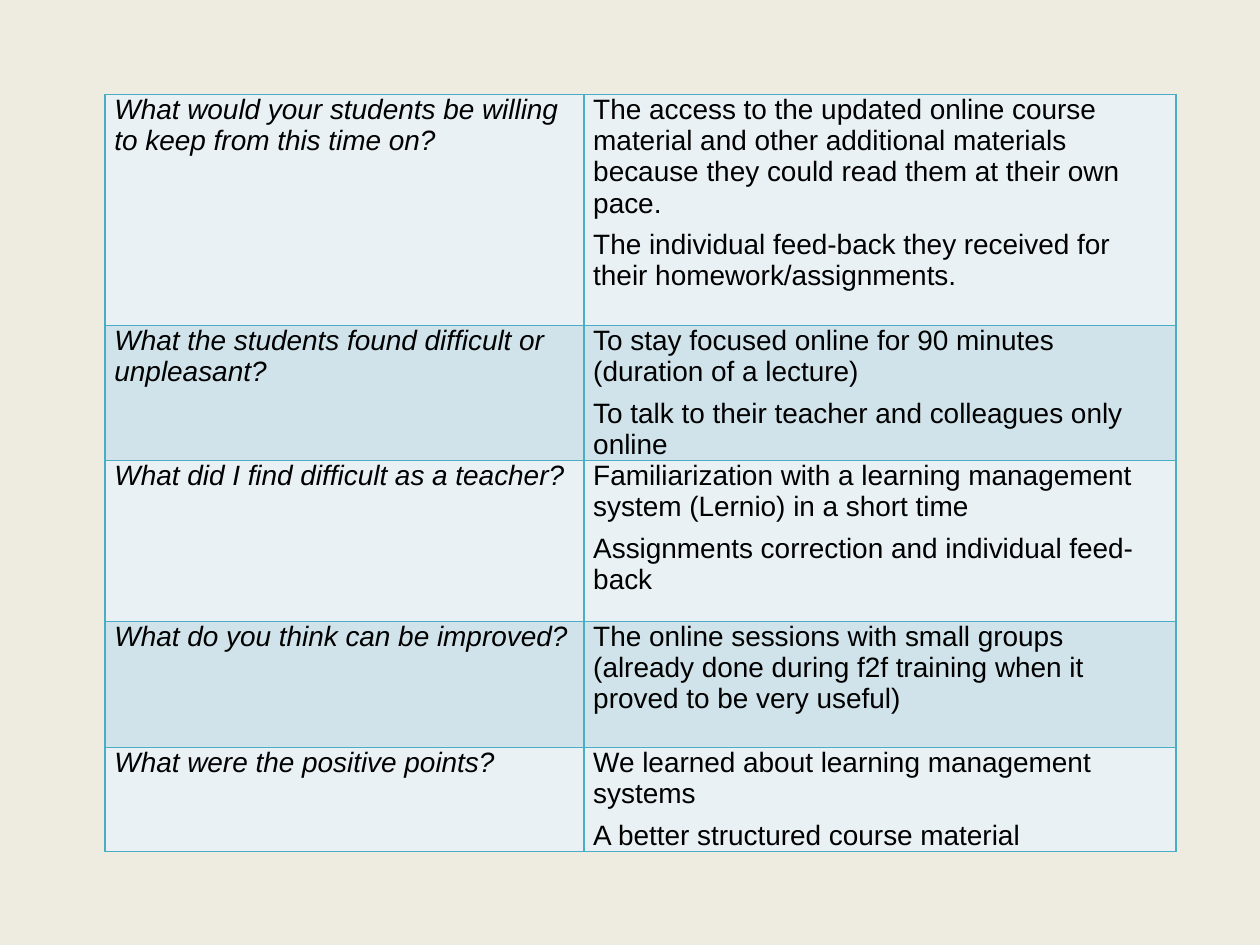
"""Builds a slide with a table of teaching questions and answers."""
from lxml import etree
from pptx import Presentation
from pptx.dml.color import RGBColor
from pptx.oxml.ns import qn
from pptx.util import Pt

BLANK_LAYOUT = 6
BACKGROUND = RGBColor(0xEE, 0xEC, 0xE1)
BORDER = RGBColor(0x4B, 0xAC, 0xC6)
TEXT = RGBColor(0, 0, 0)
BANDS = (RGBColor(0xE9, 0xF1, 0xF5), RGBColor(0xD0, 0xE3, 0xEA))

COLUMN_WIDTHS = (273.6, 338.4)
ROW_HEIGHTS = (132, 77, 92, 72, 59)
ANSWERS = (
    ("What would your students be willing to keep from this time on?",
     ("The access to the updated online course material and other additional "
      "materials because they could read them at their own pace.",
      "The individual feed-back they received for their homework/assignments.")),
    ("What the students found difficult or unpleasant?",
     ("To stay focused online for 90 minutes (duration of a lecture)",
      "To talk to their teacher and colleagues only online")),
    ("What did I find difficult as a teacher?",
     ("Familiarization with a learning management system (Lernio) in a short time",
      "Assignments correction and individual feed-back")),
    ("What do you think can be improved?",
     ("The online sessions with small groups (already done during f2f training "
      "when it proved to be very useful)",)),
    ("What were the positive points?",
     ("We learned about learning management systems",
      "A better structured course material")),
)


class SlideBuilder:
    """Holds the text style and the current slide."""

    def __init__(self, slide):
        self.slide = slide
        self.font_name = "Arial"
        self.font_size = Pt(16)
        self.space_after = Pt(6)
        self.side_margin = Pt(5.4)
        self.border_width = Pt(1)

    def background(self, color):
        fill = self.slide.background.fill
        fill.solid()
        fill.fore_color.rgb = color

    def table(self, left, top, widths, heights):
        table = self.slide.shapes.add_table(
            len(heights), len(widths), Pt(left), Pt(top),
            Pt(sum(widths)), Pt(sum(heights))).table
        table.first_row = False
        table.horz_banding = False
        for column, width in zip(table.columns, widths):
            column.width = Pt(width)
        for row, height in zip(table.rows, heights):
            row.height = Pt(height)
        return table

    def cell(self, cell, paragraphs, color, italic):
        cell.margin_left = cell.margin_right = self.side_margin
        cell.margin_top = cell.margin_bottom = 0
        self.borders(cell)
        cell.fill.solid()
        cell.fill.fore_color.rgb = color
        frame = cell.text_frame
        for index, text in enumerate(paragraphs):
            paragraph = frame.add_paragraph() if index else frame.paragraphs[0]
            paragraph.space_after = self.space_after
            run = paragraph.add_run()
            run.text = text
            run.font.name = self.font_name
            run.font.size = self.font_size
            run.font.italic = italic
            run.font.color.rgb = TEXT

    def borders(self, cell):
        properties = cell._tc.get_or_add_tcPr()
        for side in ("a:lnL", "a:lnR", "a:lnT", "a:lnB"):
            line = etree.SubElement(properties, qn(side), w=str(self.border_width))
            fill = etree.SubElement(line, qn("a:solidFill"))
            etree.SubElement(fill, qn("a:srgbClr"), val=str(BORDER))


def main():
    presentation = Presentation()
    presentation.slide_width = Pt(720)
    presentation.slide_height = Pt(540)
    layout = presentation.slide_layouts[BLANK_LAYOUT]
    builder = SlideBuilder(presentation.slides.add_slide(layout))
    builder.background(BACKGROUND)
    survey = builder.table(60, 54, COLUMN_WIDTHS, ROW_HEIGHTS)
    for row, (question, answers) in enumerate(ANSWERS):
        band = BANDS[row % 2]
        builder.cell(survey.cell(row, 0), (question,), band, True)
        builder.cell(survey.cell(row, 1), answers, band, False)
    presentation.save("out.pptx")


if __name__ == "__main__":
    main()
